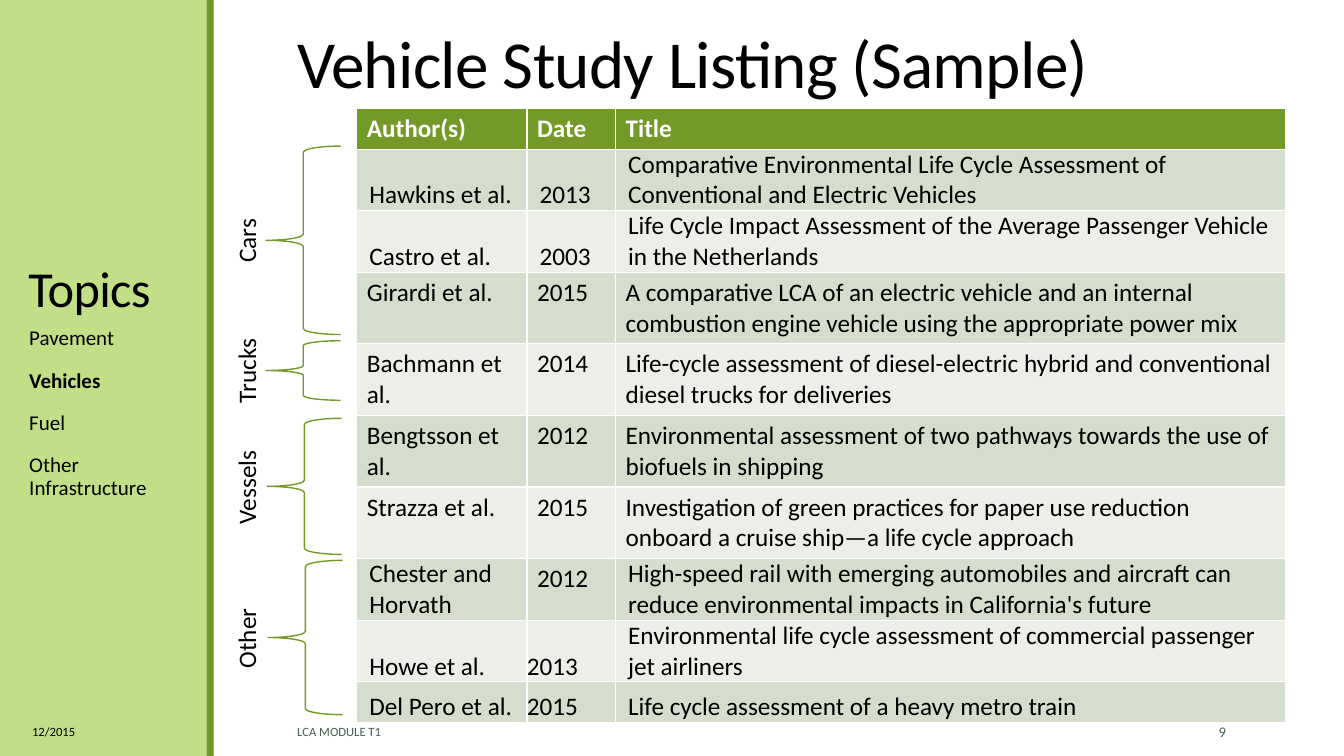
from pptx import Presentation
from pptx.dml.color import RGBColor
from pptx.enum import shapes, text
from pptx.oxml.ns import qn
from pptx.util import Pt

FONT = "Calibri"
COLORS = {
    "black": "000000", "white": "FFFFFF", "slate": "455F51",
    "sidebar": "C1DF87", "green": "739A28",
    "odd_row": "D5DECD", "even_row": "EBEFE8",
}

HEADINGS = ("Author(s)", "Date", "Title")
COLUMN_WIDTHS = (121.5, 63.3, 478.5)
ROW_HEIGHT = 29.2

# Cell layouts: normal margins, no margins with indent, no margins
NORMAL, INDENTED, FLUSH = "normal", "indented", "flush"
ALL_NORMAL = (NORMAL,) * 3
ALL_INDENTED = (INDENTED,) * 3
FLUSH_DATE = (INDENTED, FLUSH, INDENTED)

STUDIES = [
    ("Hawkins et al.", "2013", "Comparative Environmental Life Cycle Assessment of "
     "Conventional and Electric Vehicles", ALL_INDENTED),
    ("Castro et al.", "2003", "Life Cycle Impact Assessment of the Average Passenger "
     "Vehicle in the Netherlands", ALL_INDENTED),
    ("Girardi et al.", "2015", "A comparative LCA of an electric vehicle and an internal "
     "combustion engine vehicle using the appropriate power mix", ALL_NORMAL),
    ("Bachmann et al.", "2014", "Life-cycle assessment of diesel-electric hybrid and "
     "conventional diesel trucks for deliveries", ALL_NORMAL),
    ("Bengtsson et al.", "2012", "Environmental assessment of two pathways towards the "
     "use of biofuels in shipping", ALL_NORMAL),
    ("Strazza et al.", "2015", "Investigation of green practices for paper use reduction "
     "onboard a cruise ship—a life cycle approach", ALL_NORMAL),
    ("Chester and Horvath", "2012", "High-speed rail with emerging automobiles and "
     "aircraft can reduce environmental impacts in California's future",
     (INDENTED, NORMAL, INDENTED)),
    ("Howe et al.", "2013", "Environmental life cycle assessment of commercial passenger "
     "jet airliners", FLUSH_DATE),
    ("Del Pero et al.", "2015", "Life cycle assessment of a heavy metro train", FLUSH_DATE),
]

# Label, label width, brace left, brace top, brace height
VEHICLE_GROUPS = [
    ("Cars", 46, 190, 104.4, 134.6),
    ("Trucks", 61, 190, 243.4, 42.5),
    ("Vessels", 68, 190.8, 298.8, 97.2),
    ("Other", 58, 191.5, 400.3, 110.2),
]
BRACE_WIDTH = 53.3
LABEL_CENTER = 175.8
LABEL_HEIGHT = 29

TOPICS = ("Pavement", "Vehicles", "Fuel", "Other Infrastructure")
CURRENT_TOPIC = "Vehicles"


def color(name):
    return RGBColor.from_string(COLORS[name])


def style(paragraph, size, ink="black", bold=False):
    font = paragraph.font
    font.name, font.size, font.bold = FONT, Pt(size), bold
    font.color.rgb = color(ink)


def place(shape, left, top, width, height):
    shape.left, shape.top = Pt(left), Pt(top)
    shape.width, shape.height = Pt(width), Pt(height)


def add_band(slide, left, width, fill):
    band = slide.shapes.add_shape(
        shapes.MSO_SHAPE.RECTANGLE, Pt(left), 0, Pt(width), Pt(540))
    band.shadow.inherit = False
    band.fill.solid()
    band.fill.fore_color.rgb = color(fill)
    band.line.fill.background()


def add_text(slide, words, box, size, ink="black", align=text.PP_ALIGN.LEFT, wrap=True):
    label = slide.shapes.add_textbox(*map(Pt, box))
    frame = label.text_frame
    frame.word_wrap = wrap
    frame.vertical_anchor = text.MSO_ANCHOR.MIDDLE
    paragraph = frame.paragraphs[0]
    paragraph.text = words
    paragraph.alignment = align
    style(paragraph, size, ink)
    return label


def format_heading(shape, words, size):
    frame = shape.text_frame
    frame.auto_size = text.MSO_AUTO_SIZE.NONE
    frame.vertical_anchor = text.MSO_ANCHOR.BOTTOM
    paragraph = frame.paragraphs[0]
    paragraph.text = words
    paragraph.alignment = text.PP_ALIGN.LEFT
    paragraph.line_spacing = 0.85
    style(paragraph, size)
    # Slightly condensed letters
    paragraph.font._element.set("spc", "-50")


def fill_topics(body):
    place(body, 13.7, 230.4, 117.4, 266.4)
    frame = body.text_frame
    frame.auto_size = text.MSO_AUTO_SIZE.NONE
    for index, topic in enumerate(TOPICS):
        paragraph = frame.add_paragraph() if index else frame.paragraphs[0]
        paragraph.text = topic
        paragraph.line_spacing = 0.9
        paragraph.space_before = Pt(12 if index else 0)
        paragraph.space_after = Pt(2)
        properties = paragraph._p.get_or_add_pPr()
        properties.set("marL", "0")
        properties.set("indent", "0")
        properties.append(properties.makeelement(qn("a:buNone"), {}))
        style(paragraph, 15, bold=topic == CURRENT_TOPIC)


def fill_cell(cell, words, fill, layout=NORMAL, ink="black", bold=False):
    cell.fill.solid()
    cell.fill.fore_color.rgb = color(fill)
    paragraph = cell.text_frame.paragraphs[0]
    paragraph.text = words
    if layout != NORMAL:
        cell.vertical_anchor = text.MSO_ANCHOR.BOTTOM
        cell.margin_left = cell.margin_right = cell.margin_top = cell.margin_bottom = 0
    if layout == INDENTED:
        paragraph._p.get_or_add_pPr().set("marL", str(Pt(9)))
    style(paragraph, 18, ink, bold)


def add_study_table(slide):
    row_count = len(STUDIES) + 1
    table = slide.shapes.add_table(
        row_count, len(HEADINGS), Pt(254.9), Pt(77.3),
        Pt(sum(COLUMN_WIDTHS)), Pt(ROW_HEIGHT * row_count)).table
    for column, width in zip(table.columns, COLUMN_WIDTHS):
        column.width = Pt(width)
    for index, heading in enumerate(HEADINGS):
        fill_cell(table.cell(0, index), heading, "green", ink="white", bold=True)
    for row, (*values, layouts) in enumerate(STUDIES, start=1):
        fill = "odd_row" if row % 2 else "even_row"
        for index, (value, layout) in enumerate(zip(values, layouts)):
            fill_cell(table.cell(row, index), value, fill, layout)


def add_vehicle_group(slide, name, label_width, left, top, height):
    brace = slide.shapes.add_shape(
        shapes.MSO_SHAPE.LEFT_BRACE, Pt(left), Pt(top), Pt(BRACE_WIDTH), Pt(height))
    brace.shadow.inherit = False
    brace.fill.background()
    brace.line.color.rgb = color("green")
    brace.line.width = Pt(1)
    # The label is centred on the tip of its brace
    box = (LABEL_CENTER - label_width / 2, top + height / 2 - LABEL_HEIGHT / 2,
           label_width, LABEL_HEIGHT)
    label = add_text(slide, name, box, 18, wrap=False)
    label.text_frame.auto_size = text.MSO_AUTO_SIZE.SHAPE_TO_FIT_TEXT
    label.rotation = 270


def main():
    deck = Presentation()
    deck.slide_width, deck.slide_height = Pt(960), Pt(540)
    slide = deck.slides.add_slide(deck.slide_layouts[1])
    topics_title, topics_list = slide.placeholders

    # Sidebar
    add_band(slide, -2.2, 154.8, "sidebar")
    add_band(slide, 147.6, 5, "green")
    for placeholder in (topics_title, topics_list):
        slide.shapes._spTree.append(placeholder._element)  # in front of the bands
    place(topics_title, 13, 50.4, 117.4, 180)
    format_heading(topics_title, "Topics", 36)
    fill_topics(topics_list)

    # Heading and table
    heading = add_text(slide, "", (205.2, 6.5, 691.2, 69.8), 48)
    format_heading(heading, "Vehicle Study Listing (Sample)", 48)
    add_study_table(slide)

    # Vehicle groups
    for group in VEHICLE_GROUPS:
        add_vehicle_group(slide, *group)

    # Footer
    add_text(slide, "12/2015", (15.8, 508.3, 116.6, 28.8), 9)
    add_text(slide, "LCA MODULE T1", (205.2, 508.3, 538.6, 28.8), 9, "slate")
    add_text(slide, "9", (779.8, 508.3, 103, 28.8), 10.5, "slate", text.PP_ALIGN.RIGHT)

    deck.save("out.pptx")


if __name__ == "__main__":
    main()
